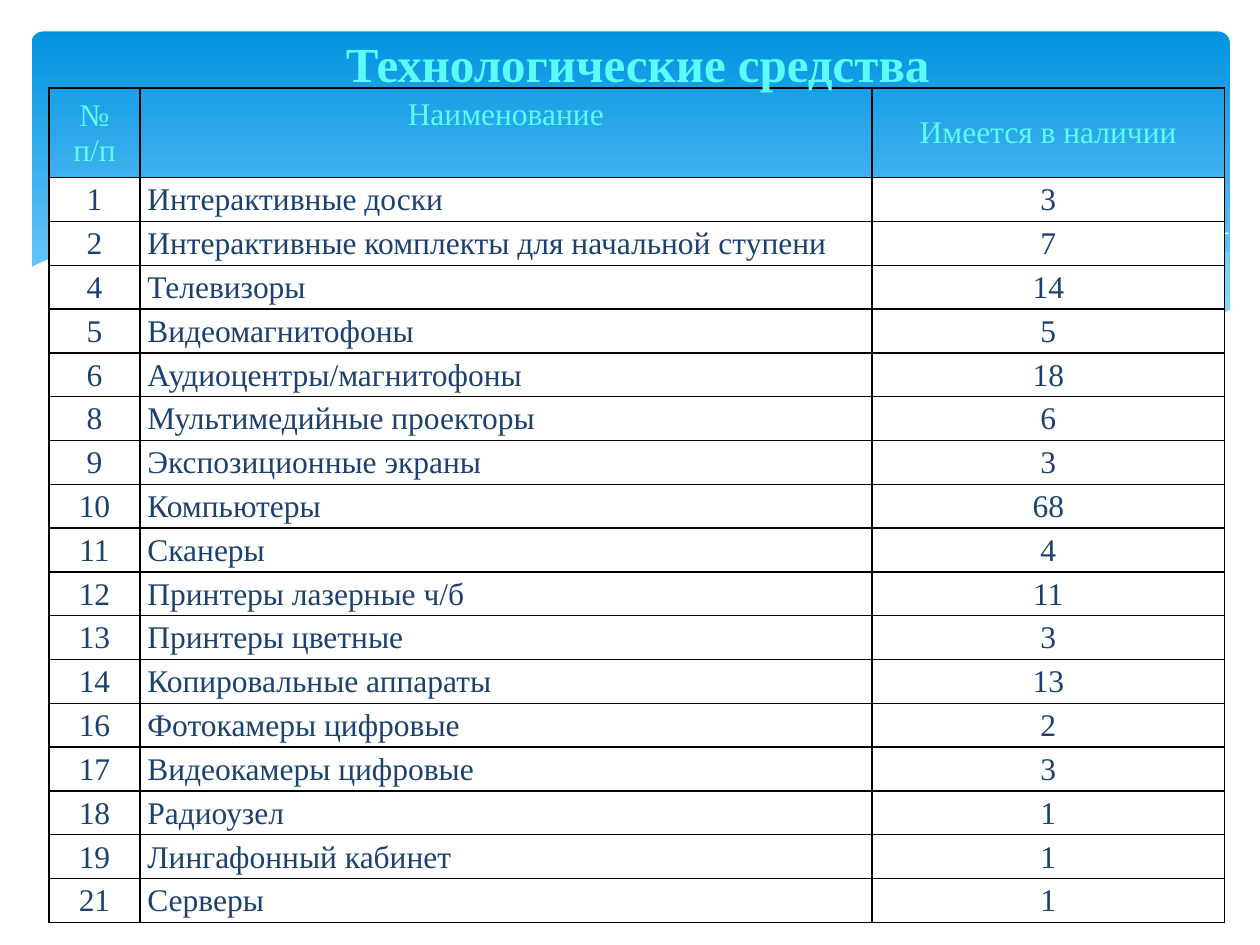
from lxml.etree import SubElement
from pptx import Presentation
from pptx.dml.color import RGBColor
from pptx.enum.shapes import MSO_SHAPE as Shape
from pptx.enum.text import MSO_ANCHOR as Anchor, PP_ALIGN as Align
from pptx.oxml import parse_xml
from pptx.oxml.ns import nsdecls, qn
from pptx.util import Inches, Pt

WHITE = RGBColor(0xFF, 0xFF, 0xFF)
BLACK = RGBColor(0x00, 0x00, 0x00)
DEEP_BLUE = RGBColor(0x02, 0x93, 0xE0)
LIGHT_BLUE = RGBColor(0x83, 0xD3, 0xFE)
PALE_BLUE = RGBColor(0xC6, 0xE7, 0xFC)
CYAN = RGBColor(0x5A, 0xFB, 0xF8)
NAVY = RGBColor(0x1B, 0x41, 0x71)

RIGHT_WAVE = [(9.76, 2), (9.35, 2.07), (8.61, 2.23), (7.79, 2.42), (7.06, 2.57),
              (6.61, 2.65), (7.05, 2.71), (7.57, 2.76), (8.14, 2.78), (8.72, 2.74),
              (9.21, 2.65), (9.49, 2.57), (9.76, 2.47)]
MIDDLE_WAVE = [(8.93, 2.73), (8.37, 2.65), (7.75, 2.54), (7.06, 2.4), (6.29, 2.22),
               (5.69, 2.08), (5.14, 1.98), (4.65, 1.91), (4.2, 1.87), (3.8, 1.85),
               (3.28, 1.87), (2.86, 1.91), (3.42, 1.99), (4.04, 2.11), (4.91, 2.32),
               (5.66, 2.48), (6.34, 2.61), (6.95, 2.7), (7.48, 2.76), (8.07, 2.78),
               (8.57, 2.77)]
FALLING_LINE = [(3.09, 1.95), (3.44, 1.9), (4.01, 1.87), (4.69, 1.89), (5.33, 1.94),
                (6.08, 2.04), (6.95, 2.19), (7.6, 2.33), (8.31, 2.51), (9.07, 2.72)]
RISING_LINE = [(6.13, 2.57), (6.72, 2.41), (7.48, 2.23), (8.06, 2.1), (8.66, 1.99),
               (9.24, 1.9), (9.75, 1.85)]
WHITE_WAVE = [(9.77, 2.46), (9.5, 2.56), (9.1, 2.67), (8.63, 2.74), (8.09, 2.77),
              (7.44, 2.74), (6.68, 2.65), (5.79, 2.5), (5.03, 2.33), (4.18, 2.13),
              (3.4, 1.97), (2.71, 1.88), (2.11, 1.84), (1.61, 1.84), (1.19, 1.87),
              (0.85, 1.93), (0.59, 1.99), (0.4, 2.05), (0.29, 2.1), (0.23, 2.13),
              (0.23, 3.29), (9.77, 3.29)]

HEADINGS = ["№\nп/п", "Наименование", "Имеется в наличии"]
EQUIPMENT = [
    (1, "Интерактивные доски", 3),
    (2, "Интерактивные комплекты для начальной ступени", 7),
    (4, "Телевизоры", 14),
    (5, "Видеомагнитофоны", 5),
    (6, "Аудиоцентры/магнитофоны", 18),
    (8, "Мультимедийные проекторы", 6),
    (9, "Экспозиционные экраны", 3),
    (10, "Компьютеры", 68),
    (11, "Сканеры", 4),
    (12, "Принтеры лазерные ч/б", 11),
    (13, "Принтеры цветные", 3),
    (14, "Копировальные аппараты", 13),
    (16, "Фотокамеры цифровые", 2),
    (17, "Видеокамеры цифровые", 3),
    (18, "Радиоузел", 1),
    (19, "Лингафонный кабинет", 1),
    (21, "Серверы", 1),
]
COLUMN_WIDTHS = [0.72, 5.81, 2.8]
TABLE_HEIGHT, HEADER_HEIGHT = 6.62, 0.71


def set_all(target, values):
    for name, value in values.items():
        setattr(target, name, value)


class SlideBuilder:
    def __init__(self, page, font):
        self.page = page
        self.font = font

    def fill_text(self, frame, text, size, color, align, bold=False, spacing=1.0):
        frame.text = text
        for para in frame.paragraphs:
            set_all(para, {"alignment": align, "line_spacing": spacing})
            for span in para.runs:
                set_all(span.font, {"name": self.font, "size": Pt(size), "bold": bold})
                span.font.color.rgb = color

    def banner(self, left, top, width, height):
        box = self.page.shapes.add_shape(
            Shape.ROUNDED_RECTANGLE, Inches(left), Inches(top), Inches(width), Inches(height))
        box.adjustments[0] = 0.034
        box.shadow.inherit = False
        box.line.fill.background()
        box.fill.gradient()
        box.fill.gradient_angle = 270
        stops = [(0, DEEP_BLUE), (0.9, LIGHT_BLUE)]
        for stop, (position, color) in zip(box.fill.gradient_stops, stops):
            stop.position = position
            stop.color.rgb = color

    def outline(self, points, closed):
        corners = [(Inches(x), Inches(y)) for x, y in points]
        builder = self.page.shapes.build_freeform(*corners[0])
        builder.add_line_segments(corners[1:], close=closed)
        shape = builder.convert_to_shape()
        shape.shadow.inherit = False
        return shape

    def wave(self, points, color, opacity=100):
        shape = self.outline(points, closed=True)
        shape.line.fill.background()
        shape.fill.solid()
        shape.fill.fore_color.rgb = color
        if opacity < 100:
            tint = shape._element.spPr.find(qn("a:solidFill"))[0]
            SubElement(tint, qn("a:alpha"), val=str(opacity * 1000))

    def curve(self, points, color):
        shape = self.outline(points, closed=False)
        shape.fill.background()
        shape.line.color.rgb = color
        shape.line.width = Pt(0)

    def title(self, text, left, top, width, height):
        box = self.page.shapes.add_textbox(
            Inches(left), Inches(top), Inches(width), Inches(height))
        set_all(box.text_frame, {"word_wrap": True, "vertical_anchor": Anchor.MIDDLE})
        self.fill_text(box.text_frame, text, 28, CYAN, Align.CENTER, bold=True)

    def border(self, cell):
        properties = cell._tc.get_or_add_tcPr()
        for index, side in enumerate("LRTB"):
            properties.insert(index, parse_xml(
                f'<a:ln{side} {nsdecls("a")} w="{Pt(1)}"><a:solidFill>'
                f'<a:srgbClr val="{BLACK}"/></a:solidFill></a:ln{side}>'))

    def cell(self, cell, text, color, align, anchor, spacing=1.0, fill=None):
        set_all(cell, {"margin_left": Inches(0.06), "margin_right": Inches(0.06),
                       "margin_top": 0, "margin_bottom": 0, "vertical_anchor": anchor})
        self.fill_text(cell.text_frame, text, 18, color, align, spacing=spacing)
        if fill is None:
            cell.fill.background()
        else:
            cell.fill.solid()
            cell.fill.fore_color.rgb = fill
        self.border(cell)

    def table(self, left, top, headings, records):
        grid = self.page.shapes.add_table(
            len(records) + 1, len(headings), Inches(left), Inches(top),
            Inches(sum(COLUMN_WIDTHS)), Inches(TABLE_HEIGHT)).table
        set_all(grid, {"first_row": False, "horz_banding": False})
        for column, width in zip(grid.columns, COLUMN_WIDTHS):
            column.width = Inches(width)
        for row in grid.rows:
            row.height = Inches((TABLE_HEIGHT - HEADER_HEIGHT) / len(records))
        grid.rows[0].height = Inches(HEADER_HEIGHT)

        for index, heading in enumerate(headings):
            self.cell(grid.cell(0, index), heading, CYAN, Align.CENTER, Anchor.MIDDLE)
        set_all(grid.cell(0, 1), {"vertical_anchor": Anchor.TOP, "margin_top": Inches(0.07)})

        aligns = [Align.CENTER, Align.JUSTIFY, Align.CENTER]
        for number, record in enumerate(records, start=1):
            for index, (value, align) in enumerate(zip(record, aligns)):
                self.cell(grid.cell(number, index), str(value), NAVY, align,
                          Anchor.TOP, spacing=1.15, fill=WHITE)


def main():
    deck = Presentation()
    set_all(deck, {"slide_width": Inches(10), "slide_height": Inches(7.5)})
    page = deck.slides.add_slide(deck.slide_layouts[6])
    slide = SlideBuilder(page, "Times New Roman")
    slide.banner(0.25, 0.25, 9.51, 2.7)
    slide.wave(RIGHT_WAVE, PALE_BLUE, opacity=29)
    slide.wave(MIDDLE_WAVE, PALE_BLUE, opacity=40)
    slide.curve(FALLING_LINE, WHITE)
    slide.curve(RISING_LINE, WHITE)
    slide.wave(WHITE_WAVE, WHITE)
    slide.table(0.39, 0.7, HEADINGS, EQUIPMENT)
    slide.title("Технологические средства", 0.55, 0.29, 9.02, 0.42)
    deck.save("out.pptx")


if __name__ == "__main__":
    main()
